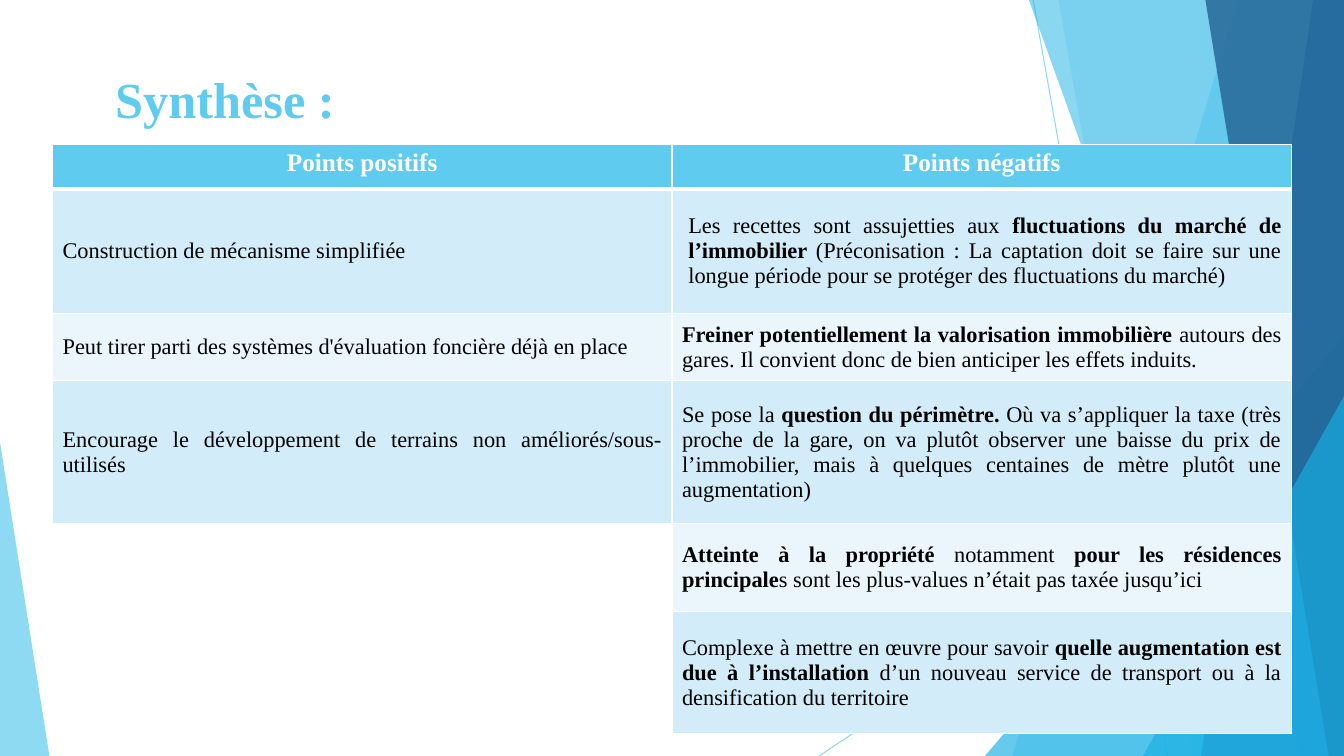
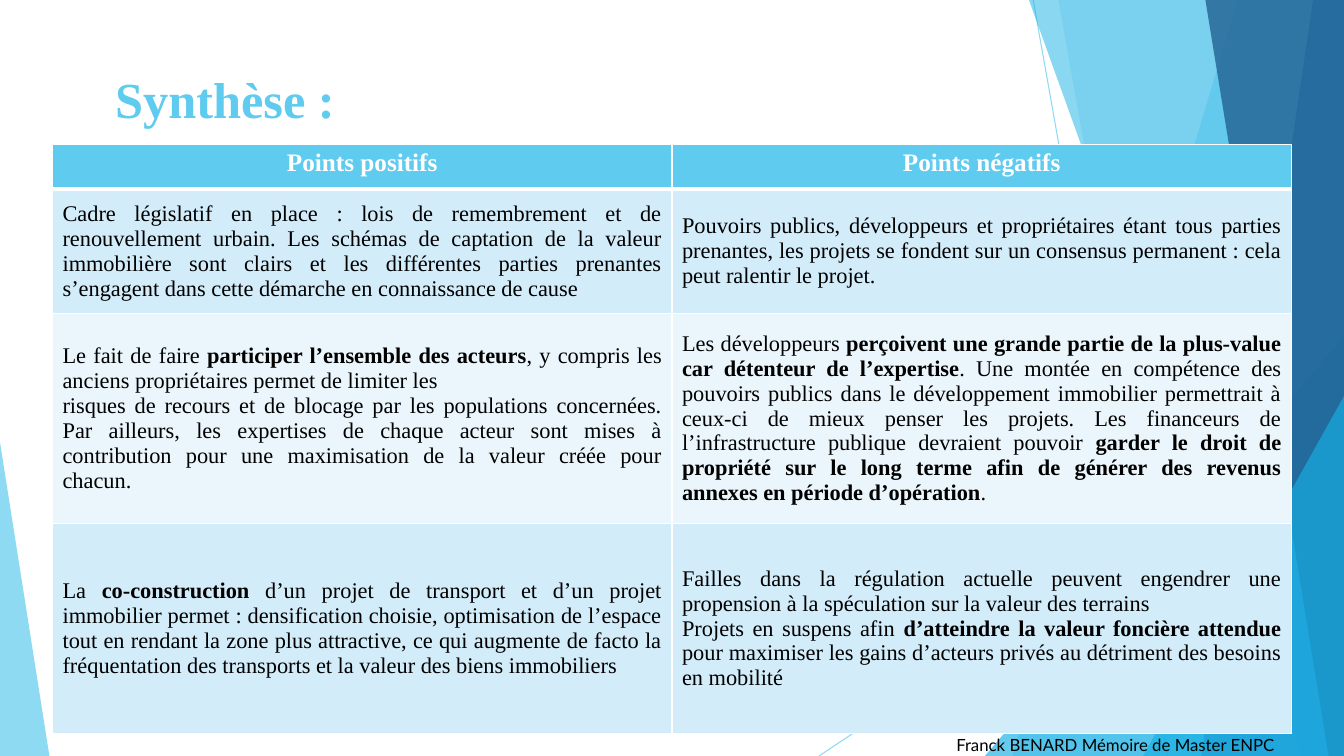
import lxml.etree
import pptx
import pptx.dml.color
import pptx.enum.shapes
import pptx.enum.text
import pptx.oxml.ns
import pptx.util

Pt = pptx.util.Pt
qn = pptx.oxml.ns.qn
Align = pptx.enum.text.PP_ALIGN
Anchor = pptx.enum.text.MSO_ANCHOR

WIDTH, HEIGHT = 960, 540
SKY, AZURE, BLUE, NAVY = "5FCBEF", "17B0E4", "2E83C3", "226292"
WHITE, BLACK = "FFFFFF", "000000"
ROW_TINTS = ("D2ECF9", "EAF6FC")
SERIF, SANS = "Times New Roman", "Lato"

TITLE = "Synthèse : "
HEADINGS = ("Points positifs", "Points négatifs")
HEADING_HEIGHT = 32
INDENTED = "Les recettes"

TAX_ROWS = [
    (89, "Construction de mécanisme simplifiée",
     "Les recettes sont assujetties aux **fluctuations du marché de l’immobilier **"
     "(Préconisation : La captation doit se faire sur une longue période pour se protéger "
     "des fluctuations du marché)"),
    (48, "Peut tirer parti des systèmes d'évaluation foncière déjà en place ",
     "**Freiner potentiellement la valorisation immobilière **autours des gares. "
     "Il convient donc de bien anticiper les effets induits. "),
    (102, "Encourage le développement de terrains non améliorés/sous-utilisés",
     "Se pose la **question du périmètre.** Où va s’appliquer la taxe (très proche de la gare, "
     "on va plutôt observer une baisse du prix de l’immobilier, mais à quelques centaines "
     "de mètre plutôt une augmentation)"),
    (63, "",
     "**Atteinte à la propriété** notamment **pour les résidences principale**"
     "s sont les plus-values n’était pas taxée jusqu’ici"),
    (87, "",
     "Complexe à mettre en œuvre pour savoir **quelle augmentation est due à l’installation**"
     " d’un nouveau service de transport ou à la densification du territoire"),
]

CONSENSUS_ROWS = [
    (89,
     "Cadre législatif en place : lois de remembrement et de renouvellement urbain. "
     "Les schémas de captation de la valeur immobilière sont clairs et les différentes parties "
     "prenantes s’engagent dans cette démarche en connaissance de cause",
     "Pouvoirs publics, développeurs et propriétaires étant tous parties prenantes, les projets "
     "se fondent sur un consensus permanent : cela peut ralentir le projet."),
    (150,
     "Le fait de faire **participer l’ensemble des acteurs**, y compris les anciens propriétaires "
     "permet de limiter les\n"
     "risques de recours et de blocage par les populations concernées. Par ailleurs, les expertises "
     "de chaque acteur sont mises à contribution pour une maximisation de la valeur créée pour chacun.",
     "Les développeurs **perçoivent une grande partie de la plus-value car détenteur de l’expertise**"
     ". Une montée en compétence des pouvoirs publics dans le développement immobilier permettrait à "
     "ceux-ci de mieux penser les projets. Les financeurs de l’infrastructure publique devraient "
     "pouvoir **garder le droit de propriété sur le long terme afin de générer des revenus annexes "
     "en période d’opération**. "),
    (150,
     "La **co-construction** d’un projet de transport et d’un projet immobilier permet : "
     "densification choisie, optimisation de l’espace tout en rendant la zone plus attractive, "
     "ce qui augmente de facto la fréquentation des transports et la valeur des biens immobiliers",
     "Failles dans la régulation actuelle peuvent engendrer une propension à la spéculation "
     "sur la valeur des terrains \n"
     "Projets en suspens afin **d’atteindre la valeur foncière attendue** pour maximiser les gains "
     "d’acteurs privés au détriment des besoins en mobilité"),
]


def rgb(code):
    """Turn a hex string into a colour."""
    return pptx.dml.color.RGBColor.from_string(code)


def set_opacity(element, percent):
    """Make the single colour of an element partly transparent."""
    colour = element.find(".//" + qn("a:srgbClr"))
    lxml.etree.SubElement(colour, qn("a:alpha"), val=str(percent * 1000))


def paint(facet, colour, opacity):
    """Give a facet a translucent fill without line or shadow."""
    facet.shadow.inherit = False
    facet.fill.solid()
    facet.fill.fore_color.rgb = rgb(colour)
    facet.line.fill.background()
    set_opacity(facet.element, opacity)
    return facet


def add_ray(slide, start, end):
    """Draw a thin translucent line."""
    ray = slide.shapes.add_connector(
        pptx.enum.shapes.MSO_CONNECTOR.STRAIGHT, *map(Pt, start + end))
    ray.line.color.rgb = rgb(SKY)
    ray.line.width = Pt(0.75)
    set_opacity(ray.element, 70)
    lxml.etree.SubElement(ray.element.spPr, qn("a:effectLst"))
    return ray


def add_side_band(slide, top_x, bottom_x, colour, opacity):
    """Draw a band from a slanted edge to the right side of the slide."""
    outline = slide.shapes.build_freeform(Pt(top_x), Pt(0))
    corners = [(WIDTH, 0), (WIDTH, HEIGHT), (bottom_x, HEIGHT)]
    outline.add_line_segments([(Pt(x), Pt(y)) for x, y in corners], close=True)
    return paint(outline.convert_to_shape(), colour, opacity)


def add_corner(slide, left, top, width, apex, colour, opacity):
    """Draw a triangle that stands on the bottom of the slide."""
    corner = slide.shapes.add_shape(
        pptx.enum.shapes.MSO_SHAPE.ISOSCELES_TRIANGLE,
        Pt(left), Pt(top), Pt(width), Pt(HEIGHT - top))
    corner.adjustments[0] = apex
    return paint(corner, colour, opacity)


def decorate_layout(layout, slide):
    """Draw the facets and move them to the layout, behind its placeholders."""
    facets = [
        add_ray(slide, (738, 0), (834, HEIGHT)),
        add_ray(slide, (WIDTH, 290), (585, HEIGHT)),
        add_side_band(slide, 884, 723, SKY, 36),
        add_side_band(slide, 756, 852, SKY, 20),
        add_corner(slide, 703.5, 240, 256.5, 1, AZURE, 66),
        add_side_band(slide, 735, 929.5, AZURE, 50),
        add_side_band(slide, 938, 858, BLUE, 70),
        add_side_band(slide, 861, 949, NAVY, 80),
        add_corner(slide, 816.5, 283, 143.5, 1, AZURE, 66),
        add_corner(slide, 0, 316, 35.3, 0, SKY, 70),
    ]
    for position, facet in enumerate(facets, start=2):
        layout.shapes.element.insert(position, facet.element)


def add_run(paragraph, text, size, colour, bold=False, font=SERIF):
    """Append one formatted run."""
    run = paragraph.add_run()
    run.text = text
    run.font.name = font
    run.font.size = Pt(size)
    run.font.bold = bold
    run.font.color.rgb = rgb(colour)


def place_title(slide):
    """Move, fill and format the title placeholder."""
    title = slide.shapes.title
    title.left, title.top, title.width, title.height = Pt(75), Pt(40.3), Pt(810), Pt(60.5)
    frame = title.text_frame
    frame.auto_size = pptx.enum.text.MSO_AUTO_SIZE.NONE
    frame.vertical_anchor = Anchor.MIDDLE
    frame.margin_left = frame.margin_right = frame.margin_top = frame.margin_bottom = Pt(7.2)
    frame.paragraphs[0].alignment = Align.LEFT
    add_run(frame.paragraphs[0], TITLE, 36, SKY, bold=True)


def set_borders(cell, top=1, bottom=1):
    """Give a cell white borders of the given widths."""
    properties = cell._tc.get_or_add_tcPr()
    sides = (("L", 1), ("R", 1), ("T", top), ("B", bottom))
    for position, (side, width) in enumerate(sides):
        border = lxml.etree.Element(qn("a:ln" + side), w=str(Pt(width)))
        fill = lxml.etree.SubElement(border, qn("a:solidFill"))
        lxml.etree.SubElement(fill, qn("a:srgbClr"), val=WHITE)
        properties.insert(position, border)


def fill_heading(cell, text):
    """Write one column heading."""
    cell.fill.solid()
    cell.fill.fore_color.rgb = rgb(SKY)
    paragraph = cell.text_frame.paragraphs[0]
    paragraph.alignment = Align.CENTER
    add_run(paragraph, text, 18, WHITE, bold=True)
    set_borders(cell, bottom=3)


def fill_point(cell, text, tint, top_border):
    """Write one argument, with bold parts between double asterisks."""
    set_borders(cell, top=top_border)
    if not text:
        cell.fill.background()
        return
    cell.fill.solid()
    cell.fill.fore_color.rgb = rgb(tint)
    cell.vertical_anchor = Anchor.MIDDLE
    if text.startswith(INDENTED):
        cell.margin_left = Pt(11.7)
    for number, line in enumerate(text.split("\n")):
        frame = cell.text_frame
        paragraph = frame.add_paragraph() if number else frame.paragraphs[0]
        paragraph.alignment = Align.JUSTIFY
        for part, words in enumerate(line.split("**")):
            if words:
                add_run(paragraph, words, 16, BLACK, bold=part % 2 == 1)


def add_comparison(slide, rows):
    """Add the table of positive and negative points."""
    heights = [HEADING_HEIGHT] + [row[0] for row in rows]
    comparison = slide.shapes.add_table(
        len(heights), len(HEADINGS), Pt(37.5), Pt(103), Pt(885), Pt(sum(heights))).table
    comparison.horz_banding = False
    for row, height in zip(comparison.rows, heights):
        row.height = Pt(height)
    for column, heading in enumerate(HEADINGS):
        fill_heading(comparison.cell(0, column), heading)
        for number, row in enumerate(rows):
            fill_point(comparison.cell(number + 1, column), row[column + 1],
                       ROW_TINTS[number % 2], 1 if number else 3)


def add_credit(slide, text):
    """Add the author line at the bottom right."""
    credit = slide.shapes.add_textbox(Pt(676), Pt(525), Pt(280), Pt(15))
    frame = credit.text_frame
    frame.word_wrap = True
    frame.margin_top = frame.margin_bottom = 0
    add_run(frame.paragraphs[0], text, 12, BLACK, font=SANS)


def main():
    """Build and save the presentation."""
    deck = pptx.Presentation()
    deck.slide_width, deck.slide_height = Pt(WIDTH), Pt(HEIGHT)
    layout = deck.slide_layouts[5]
    tax, consensus = (deck.slides.add_slide(layout) for _ in range(2))
    decorate_layout(layout, tax)
    for slide, rows in ((tax, TAX_ROWS), (consensus, CONSENSUS_ROWS)):
        place_title(slide)
        add_comparison(slide, rows)
    add_credit(consensus, "Franck BENARD Mémoire de Master ENPC")
    deck.save("out.pptx")


if __name__ == "__main__":
    main()
